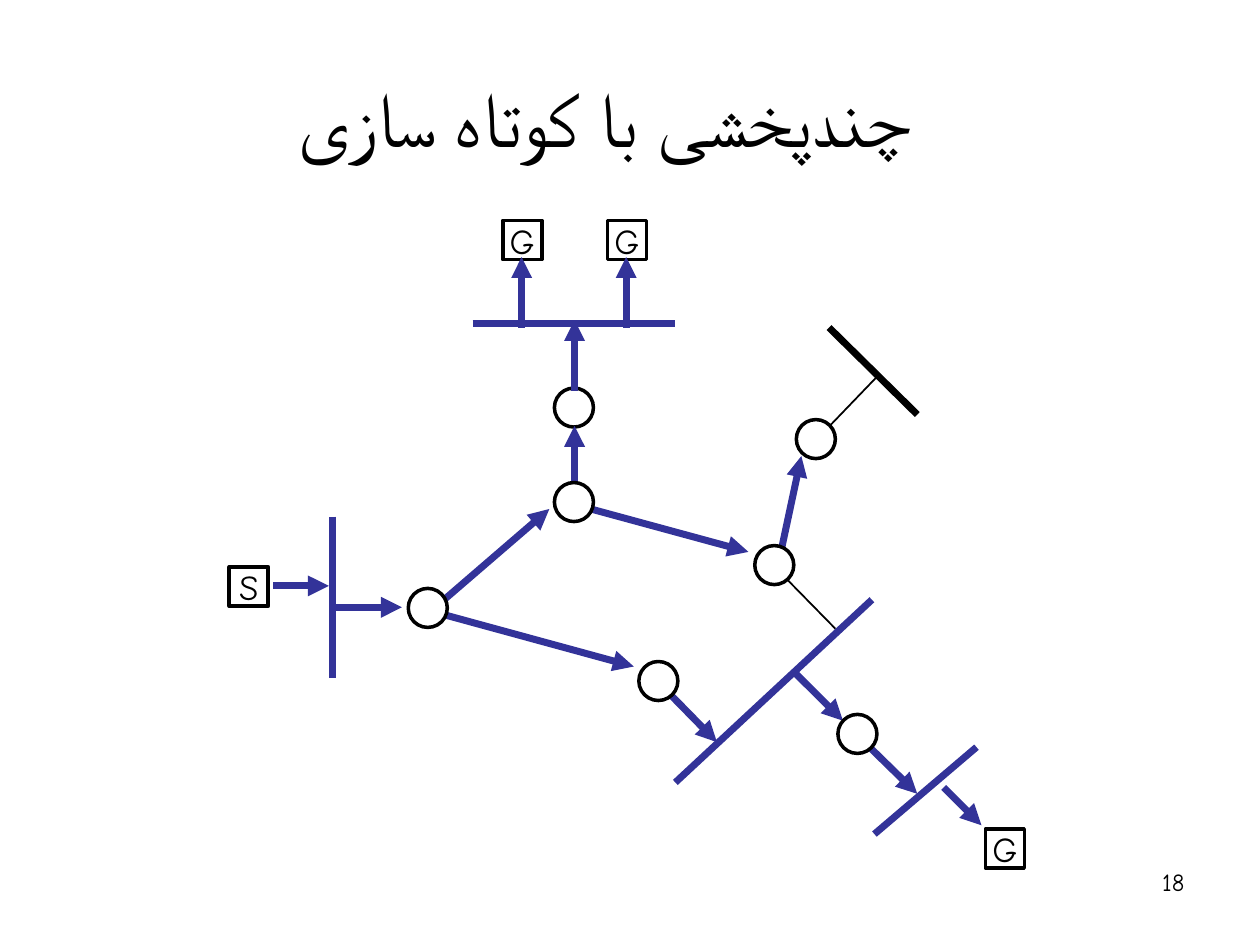
from lxml import etree
from pptx import Presentation
from pptx.dml.color import RGBColor
from pptx.enum import shapes, text
from pptx.oxml import ns
from pptx.util import Inches, Pt

COLORS = {"black": "000000", "white": "FFFFFF", "tree": "333399"}
FONT = "Comic Neue"
NODE = 0.31  # side of a host box and diameter of a router

presentation = Presentation()
presentation.slide_width, presentation.slide_height = Inches(10), Inches(7.5)
slide = presentation.slides.add_slide(presentation.slide_layouts[5])


def write(shape, words, size, alignment, anchor, wrap=True):
    frame = shape.text_frame
    frame.text = words
    frame.word_wrap = wrap
    frame.auto_size = text.MSO_AUTO_SIZE.NONE
    frame.vertical_anchor = anchor
    paragraph = frame.paragraphs[0]
    paragraph.alignment = alignment
    font = paragraph.runs[0].font
    for name, value in {"name": FONT, "size": Pt(size), "bold": False}.items():
        setattr(font, name, value)
    font.color.rgb = RGBColor.from_string(COLORS["black"])
    return paragraph


def add_line(start, end, color, width, arrow=False):
    line = slide.shapes.add_connector(
        shapes.MSO_CONNECTOR.STRAIGHT, *(Inches(value) for value in start + end))
    line.line.color.rgb = RGBColor.from_string(COLORS[color])
    line.line.width = Pt(width)
    if arrow:
        etree.SubElement(line.line._get_or_add_ln(), ns.qn("a:tailEnd"), type="triangle")
    etree.SubElement(line._element.spPr, ns.qn("a:effectLst"))


# Title, set right to left with a hanging indent
title = slide.shapes.title
title_format = {"left": 0.5, "top": 0.47, "width": 8.6, "height": 0.92}
for name, value in title_format.items():
    setattr(title, name, Inches(value))
paragraph = write(title, "چندپخشی با کوتاه سازی", 44,
                  text.PP_ALIGN.CENTER, text.MSO_ANCHOR.MIDDLE)
properties = paragraph._p.get_or_add_pPr()
indent = Inches(0.31)
for name, value in {"marL": indent, "indent": -indent, "rtl": 1}.items():
    properties.set(name, str(int(value)))

# Slide number
number = slide.shapes.add_textbox(Inches(7.17), Inches(6.83), Inches(2.33), Inches(0.52))
write(number, "18", 14, text.PP_ALIGN.RIGHT, text.MSO_ANCHOR.TOP)

# Pruned links
for start, end in [((6.47, 3.5), (6.97, 2.98)), ((6.14, 4.49), (6.63, 4.99))]:
    add_line(start, end, "black", 1)

# Networks: start, end, colour
networks = [
    ((3.75, 2.57), (5.36, 2.57), "tree"),
    ((2.64, 4.1), (2.64, 5.38), "tree"),
    ((6.92, 4.76), (5.36, 6.21), "tree"),
    ((7.75, 5.93), (6.94, 6.62), "tree"),
    ((6.58, 2.6), (7.28, 3.29), "black"),
]
for start, end, color in networks:
    add_line(start, end, color, 4)

# Multicast tree, from the source to the group members
arrows = [
    ((2.17, 4.65), (2.61, 4.65)),
    ((2.67, 4.82), (3.19, 4.82)),
    ((3.42, 4.85), (4.36, 4.04)),
    ((3.42, 4.85), (5.03, 5.29)),
    ((4.58, 4.01), (5.94, 4.38)),
    ((6.17, 4.51), (6.36, 3.62)),
    ((4.56, 3.85), (4.56, 3.38)),
    ((4.56, 3.1), (4.56, 2.54)),
    ((4.14, 2.6), (4.14, 2.04)),
    ((4.97, 2.6), (4.97, 2.04)),
    ((5.24, 5.43), (5.69, 5.89)),
    ((6.32, 5.35), (6.69, 5.72)),
    ((6.82, 5.85), (7.28, 6.3)),
    ((7.49, 6.25), (7.79, 6.55)),
]

# Hosts carry a letter, routers do not; those under arrow ends come first
nodes_below = [(3.99, 1.75, "G"), (4.82, 1.75, "G"), (7.82, 6.58, "G"),
               (1.82, 4.5, "S"), (4.4, 3.08, "")]
nodes_above = [(4.4, 3.83, ""), (3.24, 4.67, ""), (5.99, 4.33, ""),
               (6.32, 3.33, ""), (5.07, 5.25, ""), (6.65, 5.67, "")]
for layer, nodes in enumerate([nodes_below, nodes_above]):
    if layer == 1:
        for start, end in arrows:
            add_line(start, end, "tree", 4, arrow=True)
    for left, top, letter in nodes:
        kind = shapes.MSO_SHAPE.RECTANGLE if letter else shapes.MSO_SHAPE.OVAL
        node = slide.shapes.add_shape(
            kind, Inches(left), Inches(top), Inches(NODE), Inches(NODE))
        node.shadow.inherit = False
        if letter == "G":
            node.fill.background()
        else:
            node.fill.solid()
            node.fill.fore_color.rgb = RGBColor.from_string(COLORS["white"])
        node.line.color.rgb = RGBColor.from_string(COLORS["black"])
        node.line.width = Pt(2.25 if letter == "S" else 2)
        if letter:
            write(node, letter, 20, text.PP_ALIGN.CENTER,
                  text.MSO_ANCHOR.MIDDLE, wrap=False)

presentation.save("out.pptx")
